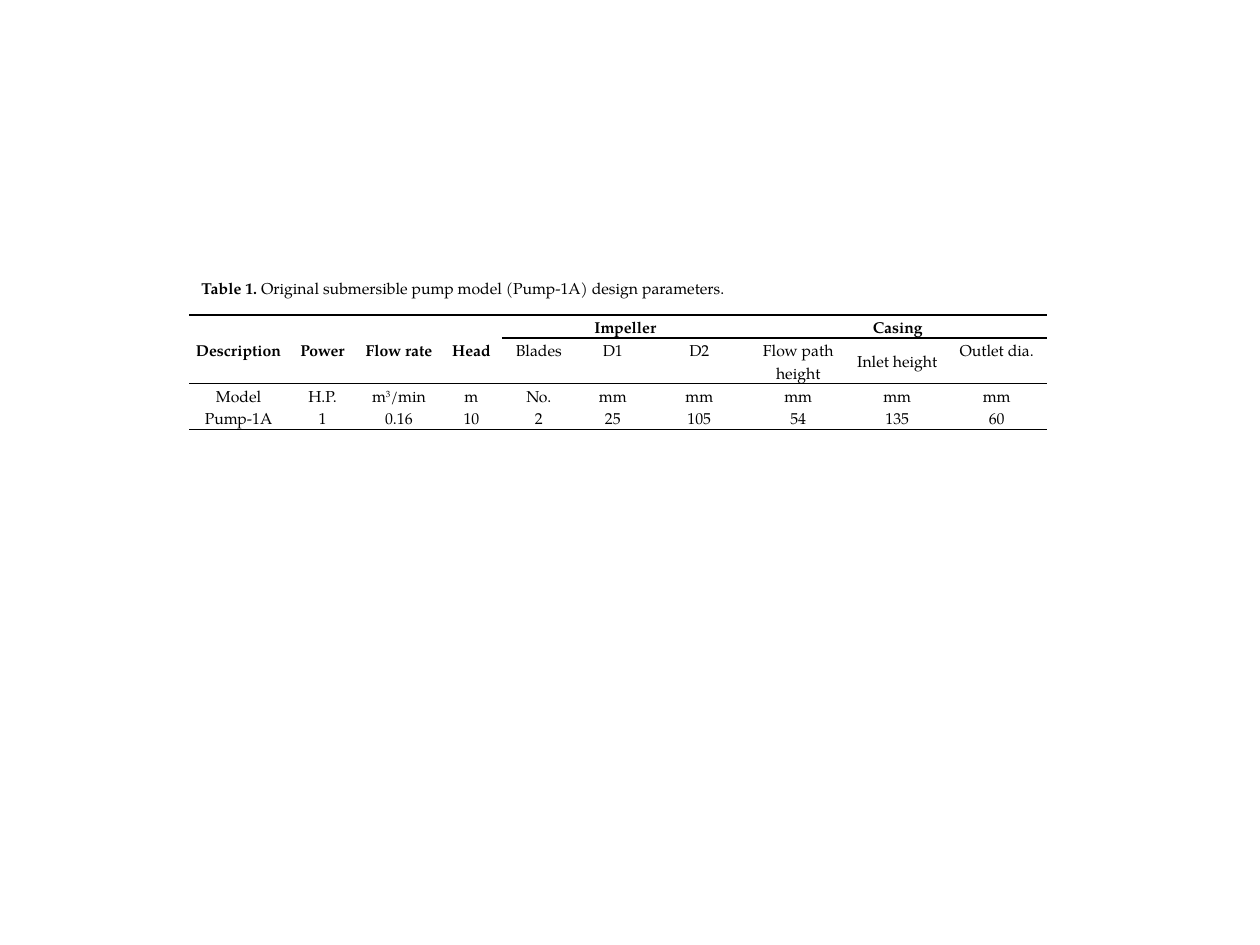
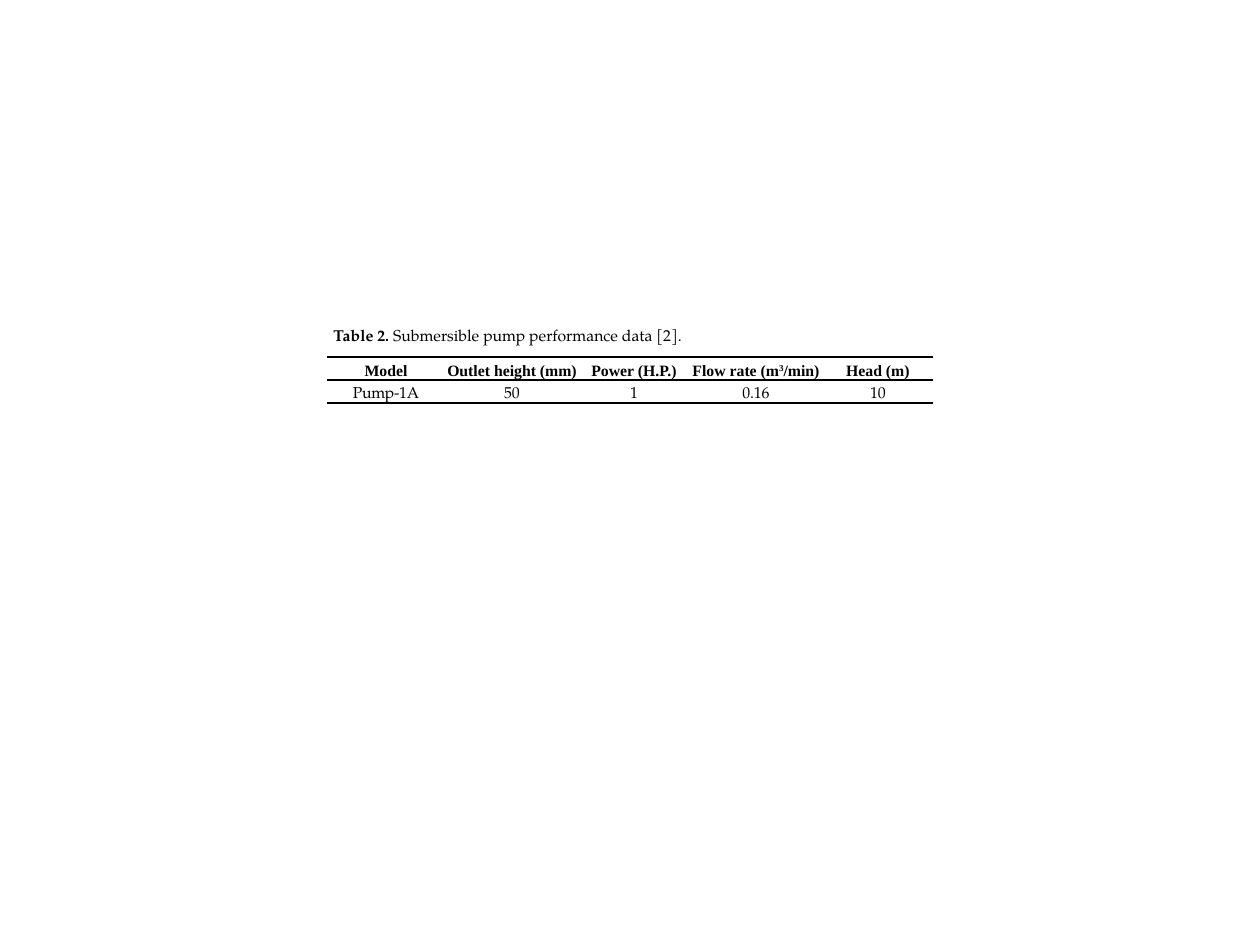
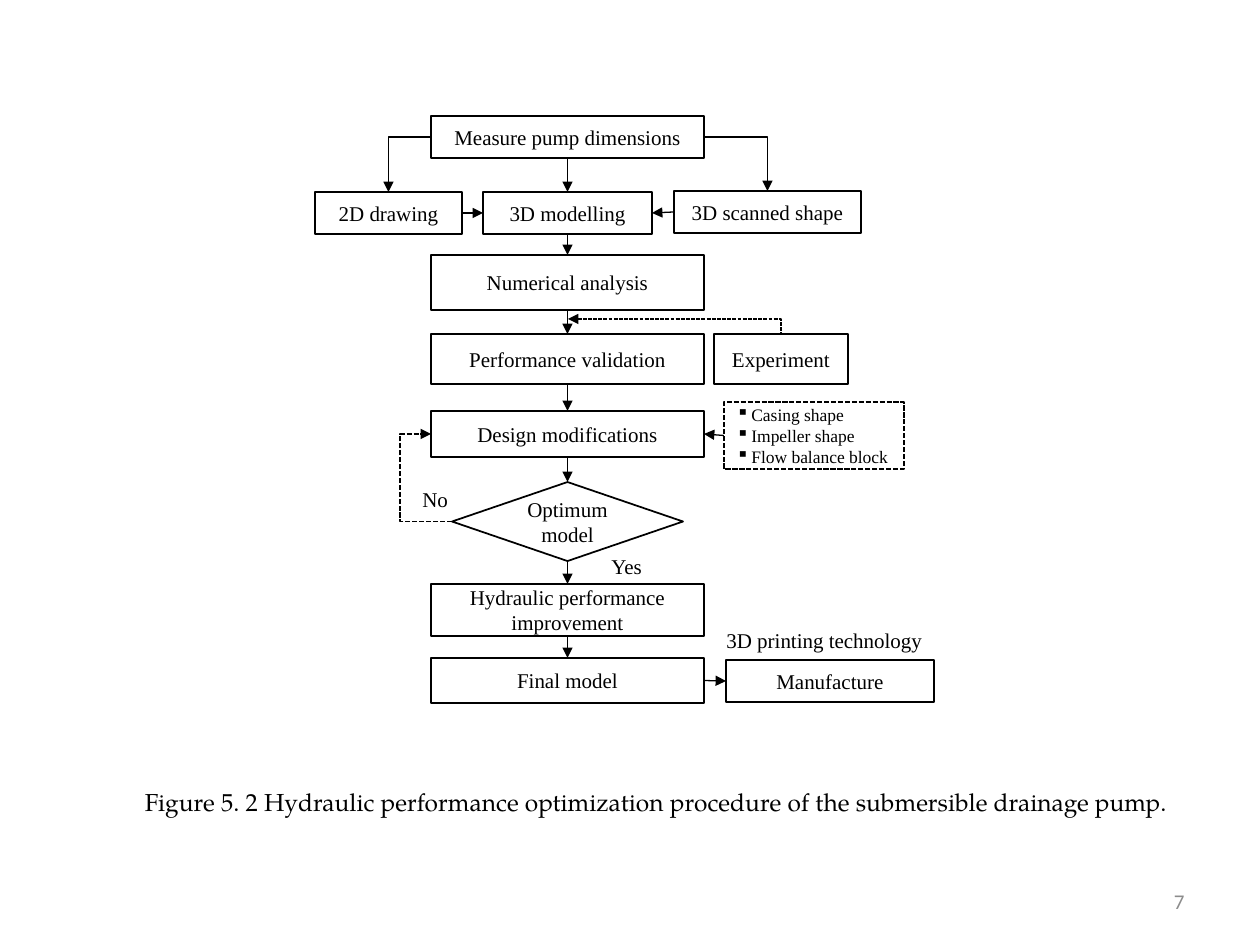
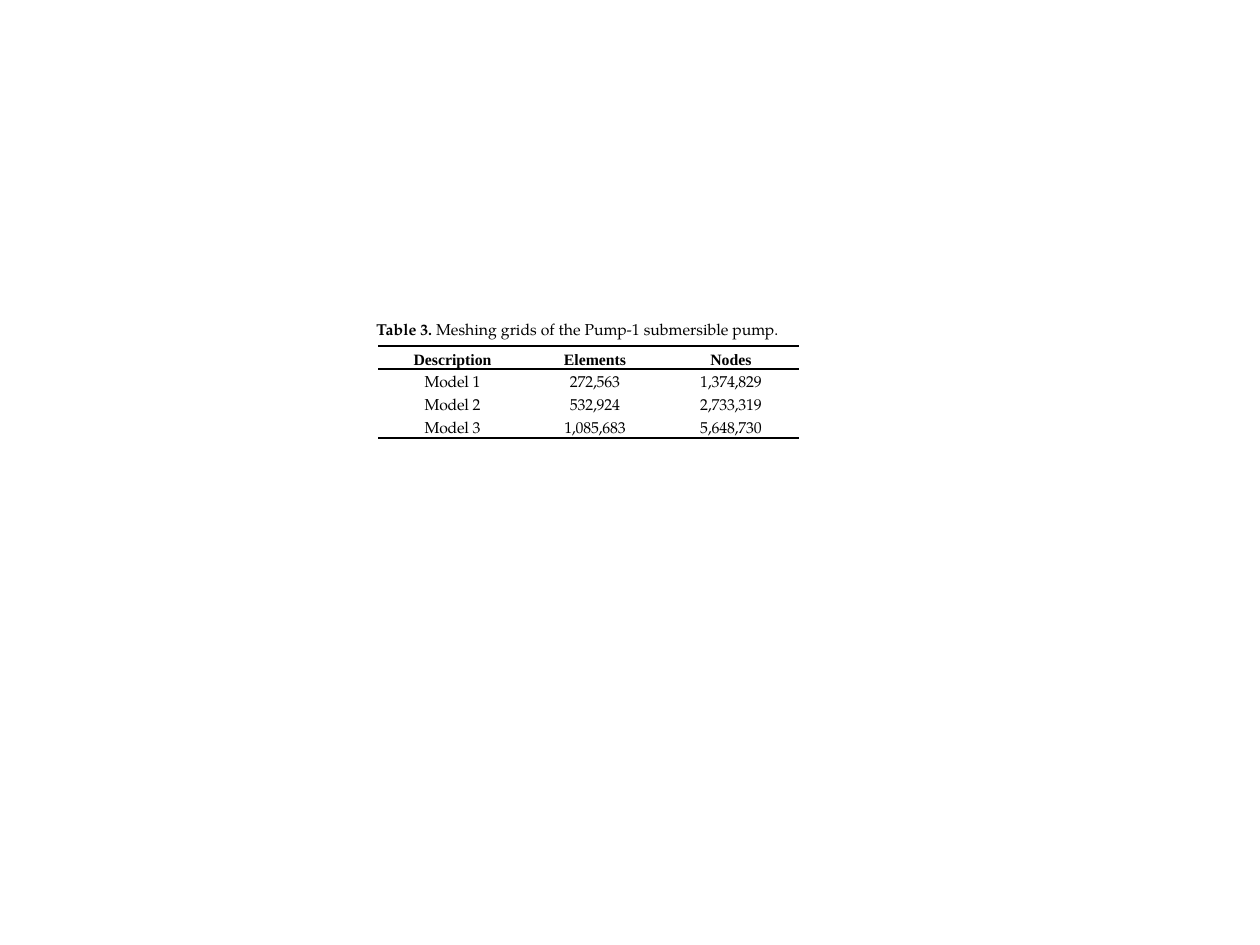
from lxml import etree
from pptx import Presentation
from pptx.dml.color import RGBColor
from pptx.enum.dml import MSO_LINE
from pptx.enum.shapes import MSO_CONNECTOR, MSO_SHAPE
from pptx.enum.text import MSO_ANCHOR, PP_ALIGN
from pptx.oxml.ns import qn
from pptx.util import Pt

EMU_PER_PX = 914400 / 126
BLACK, WHITE, GREY = "000000", "FFFFFF", "8C8C8C"
PAGELLA, TIMES, CALIBRI = "TeX Gyre Pagella", "Times New Roman", "Calibri"
LEFT, CENTER, RIGHT = PP_ALIGN.LEFT, PP_ALIGN.CENTER, PP_ALIGN.RIGHT
ANCHOR_TOP, ANCHOR_MIDDLE = MSO_ANCHOR.TOP, MSO_ANCHOR.MIDDLE
RECTANGLE, DIAMOND = MSO_SHAPE.RECTANGLE, MSO_SHAPE.DIAMOND
STRAIGHT, ELBOW = MSO_CONNECTOR.STRAIGHT, MSO_CONNECTOR.ELBOW
SHORT_DASH = MSO_LINE.SQUARE_DOT
TOP_SIDE, LEFT_SIDE, BOTTOM_SIDE, RIGHT_SIDE = range(4)
TABLE_SIZE = 9
ROW_HEIGHT = 23
NO_RULE = 99


def px(value):
    return round(value * EMU_PER_PX)


def color(value):
    return RGBColor.from_string(value)


def add_span(para, text, size, font, bold=False, fill=BLACK):
    span = para.add_run()
    span.text = text
    span.font.size = Pt(size)
    span.font.name = font
    span.font.bold = bold
    span.font.color.rgb = color(fill)
    return span


def add_text(page, place, spans, size, font, align=LEFT, anchor=ANCHOR_TOP, fill=BLACK):
    box = page.shapes.add_textbox(*map(px, place))
    frame = box.text_frame
    frame.word_wrap = True
    frame.vertical_anchor = anchor
    para = frame.paragraphs[0]
    para.alignment = align
    for text, bold in spans:
        add_span(para, text, size, font, bold, fill)
    return para


def add_table_caption(page, place, label, text):
    spans = [(label, True), (text, False)]
    add_text(page, place, spans, TABLE_SIZE, PAGELLA, anchor=ANCHOR_MIDDLE)


def set_border(cell, index, side, visible):
    line = etree.Element(qn(f"a:{side}"))
    if visible:
        line.set("w", str(Pt(1)))
        fill = etree.SubElement(line, qn("a:solidFill"))
        etree.SubElement(fill, qn("a:srgbClr")).set("val", BLACK)
    else:
        etree.SubElement(line, qn("a:noFill"))
    cell._tc.get_or_add_tcPr().insert(index, line)


def fill_cell(cell, text, font, bold, spacing):
    para = cell.text_frame.paragraphs[0]
    para.alignment = CENTER
    para.line_spacing = Pt(13)
    para.font.size = Pt(TABLE_SIZE)
    for index, part in enumerate(text.split("^")):
        if part:
            span = add_span(para, part, TABLE_SIZE, font, bold)
            properties = span.font._element
            if index % 2:
                properties.set("baseline", "30000")
            if spacing and not bold:
                properties.set("spc", str(spacing))


def add_ruled_table(page, left, top, widths, heights, rows, rules, header_font,
                    merges=(), bold_cells=(), top_cells=(), side_margin=0, spacing=0):
    frame = page.shapes.add_table(len(rows), len(widths), px(left), px(top),
                                  px(sum(widths)), px(sum(heights)))
    table = frame.table
    table.first_row = table.horz_banding = False
    for column, width in zip(table.columns, widths):
        column.width = px(width)
    for row, height in zip(table.rows, heights):
        row.height = px(height)
    for first, last in merges:
        table.cell(*first).merge(table.cell(*last))
    for r, texts in enumerate(rows):
        for c, text in enumerate(texts):
            cell = table.cell(r, c)
            cell.margin_left = cell.margin_right = px(side_margin)
            cell.margin_top = cell.margin_bottom = 0
            cell.vertical_anchor = ANCHOR_TOP if (r, c) in top_cells else ANCHOR_MIDDLE
            bold = r == 0 or (r, c) in bold_cells
            fill_cell(cell, text, header_font if bold else PAGELLA, bold, spacing)
            cell.fill.background()
            above = c >= rules.get(r, NO_RULE)
            below = c >= rules.get(r + cell.span_height, NO_RULE)
            sides = {"lnL": False, "lnR": False, "lnT": above, "lnB": below}
            for index, (side, visible) in enumerate(sides.items()):
                set_border(cell, index, side, visible)


def add_box(page, place, text="", outline=RECTANGLE, dash=None):
    box = page.shapes.add_shape(outline, *map(px, place))
    box.shadow.inherit = False
    box.fill.solid()
    box.fill.fore_color.rgb = color(WHITE)
    box.line.color.rgb = color(BLACK)
    box.line.width = Pt(1)
    if dash:
        box.line.dash_style = dash
    frame = box.text_frame
    frame.word_wrap = True
    frame.vertical_anchor = ANCHOR_MIDDLE
    if text:
        para = frame.paragraphs[0]
        para.alignment = CENTER
        add_span(para, text, 12, TIMES)
    return box


def add_bullets(box, items):
    frame = box.text_frame
    for index, item in enumerate(items):
        para = frame.add_paragraph() if index else frame.paragraphs[0]
        para.alignment = LEFT
        properties = para._p.get_or_add_pPr()
        properties.set("marL", str(px(15)))
        properties.set("indent", str(px(-15)))
        etree.SubElement(properties, qn("a:buChar")).set("char", "▪")
        add_span(para, item, 10, TIMES)


def add_arrow(page, start, end, kind=STRAIGHT, preset=None, bend=None,
              width=0.75, dash=None, arrow_end="tailEnd"):
    ends = [(0, 0) if hasattr(target[0], "shape_id") else tuple(map(px, target))
            for target in (start, end)]
    arrow = page.shapes.add_connector(kind, *ends[0], *ends[1])
    for target, join in ((start, arrow.begin_connect), (end, arrow.end_connect)):
        if hasattr(target[0], "shape_id"):
            join(*target)
    arrow.line.color.rgb = color(BLACK)
    arrow.line.width = Pt(width)
    if dash:
        arrow.line.dash_style = dash
    properties = arrow._element.spPr
    geometry = properties.find(qn("a:prstGeom"))
    if preset:
        geometry.set("prst", preset)
    if bend:
        guide = etree.SubElement(geometry.find(qn("a:avLst")), qn("a:gd"))
        guide.set("name", "adj1")
        guide.set("fmla", f"val {bend}")
    line = properties.find(qn("a:ln"))
    etree.SubElement(line, qn(f"a:{arrow_end}")).set("type", "triangle")
    etree.SubElement(properties, qn("a:effectLst"))


def build_design_parameters(page):
    rows = [
        ["Description", "Power", "Flow rate", "Head", "Impeller", "", "", "Casing", "", ""],
        ["", "", "", "", "Blades", "D1", "D2", "Flow path height", "Inlet height",
         "Outlet dia."],
        ["Model", "H.P.", "m^3^/min", "m", "No."] + ["mm"] * 5,
        ["Pump-1A", "1", "0.16", "10", "2", "25", "105", "54", "135", "60"],
    ]
    merges = [((0, c), (1, c)) for c in range(4)]
    merges += [((0, c), (0, c + 2)) for c in (4, 7)]
    add_ruled_table(page, 189, 315, [99, 69, 84, 61, 74, 74, 99, 99, 99, 100],
                    [ROW_HEIGHT, 45, ROW_HEIGHT, ROW_HEIGHT], rows,
                    {0: 0, 1: 4, 2: 0, 4: 0}, PAGELLA, merges,
                    top_cells=[(1, c) for c in (4, 5, 6, 9)])
    add_table_caption(page, (189, 272, 858, 32), "Table 1. ",
                      "Original submersible pump model (Pump-1A) design parameters.")


def build_performance_data(page):
    rows = [
        ["Model", "Outlet height (mm)", "Power (H.P.)", "Flow rate (m^3^/min)", "Head (m)"],
        ["Pump-1A", "50", "1", "0.16", "10"],
    ]
    add_ruled_table(page, 327, 357, [118, 134, 110, 134, 110], [ROW_HEIGHT] * 2, rows,
                    {0: 0, 1: 0, 2: 0}, TIMES, spacing=-10)
    add_table_caption(page, (321, 319, 380, 32), "Table 2.",
                      " Submersible pump performance data [2].")


def build_optimization_procedure(page):
    caption = add_text(
        page, (53, 793, 1207, 33),
        [("Figure 5. 2 Hydraulic performance optimization procedure of the "
          "submersible drainage pump.", False)], 14, PAGELLA, CENTER)
    caption.line_spacing = Pt(9.8)
    caption.space_after = Pt(4.5)
    add_text(page, (903, 876, 294, 50), [("7", False)], 12, CALIBRI, RIGHT,
             ANCHOR_MIDDLE, GREY)

    def add_step(top, height, text):
        return add_box(page, (431, top, 273, height), text)

    measure = add_step(116, 42, "Measure pump dimensions")
    modelling = add_box(page, (483, 192, 169, 42), "3D modelling")
    drawing = add_box(page, (315, 192, 147, 42), "2D drawing")
    scan = add_box(page, (674, 191, 187, 42), "3D scanned shape")
    analysis = add_step(255, 55, "Numerical analysis")
    validation = add_step(334, 50, "Performance validation")
    experiment = add_box(page, (714, 334, 134, 50), "Experiment")
    modifications = add_step(411, 46, "Design modifications")
    options = add_box(page, (724, 402, 180, 67), dash=SHORT_DASH)
    add_bullets(options, ["Casing shape", "Impeller shape", "Flow balance block"])
    decision = add_box(page, (452, 482, 231, 79), "Optimum model", DIAMOND)
    improvement = add_step(584, 52, "Hydraulic performance improvement")
    final = add_step(658, 45, "Final model")
    manufacture = add_box(page, (726, 660, 208, 42), "Manufacture")

    steps = [measure, modelling, analysis, validation, modifications, decision,
             improvement, final]
    for upper, lower in zip(steps, steps[1:]):
        add_arrow(page, (upper, BOTTOM_SIDE), (lower, TOP_SIDE))
    for source, target in ((drawing, modelling), (final, manufacture)):
        add_arrow(page, (source, RIGHT_SIDE), (target, LEFT_SIDE))
    for source, target in ((scan, modelling), (options, modifications)):
        add_arrow(page, (source, LEFT_SIDE), (target, RIGHT_SIDE))
    for side, target in ((LEFT_SIDE, drawing), (RIGHT_SIDE, scan)):
        add_arrow(page, (measure, side), (target, TOP_SIDE), ELBOW, "bentConnector2")
    add_arrow(page, (568, 319), (experiment, TOP_SIDE), ELBOW, "bentConnector2",
              dash=SHORT_DASH, arrow_end="headEnd")
    add_arrow(page, (decision, LEFT_SIDE), (modifications, LEFT_SIDE), ELBOW,
              bend=247100, width=1, dash=SHORT_DASH)

    for place, text in (((410, 480, 63, 38), "No"), ((599, 547, 63, 38), "Yes"),
                        ((714, 621, 231, 38), "3D printing technology")):
        add_text(page, place, [(text, False)], 12, TIMES)


def build_meshing_grids(page):
    rows = [
        ["Description", "Elements", "Nodes"],
        ["Model 1", "272,563", "1,374,829"],
        ["Model 2", "532,924", "2,733,319"],
        ["Model 3", "1,085,683", "5,648,730"],
    ]
    add_ruled_table(page, 378, 346, [149, 136, 136], [ROW_HEIGHT] * 4, rows,
                    {0: 0, 1: 0, 4: 0}, TIMES, side_margin=6, spacing=-10)
    add_table_caption(page, (364, 313, 440, 32), "Table 3.",
                      " Meshing grids of the Pump-1 submersible pump.")


def main():
    deck = Presentation()
    deck.slide_width, deck.slide_height = px(1260), px(945)
    for build in (build_design_parameters, build_performance_data,
                  build_optimization_procedure, build_meshing_grids):
        build(deck.slides.add_slide(deck.slide_layouts[6]))
    deck.save("out.pptx")


if __name__ == "__main__":
    main()
